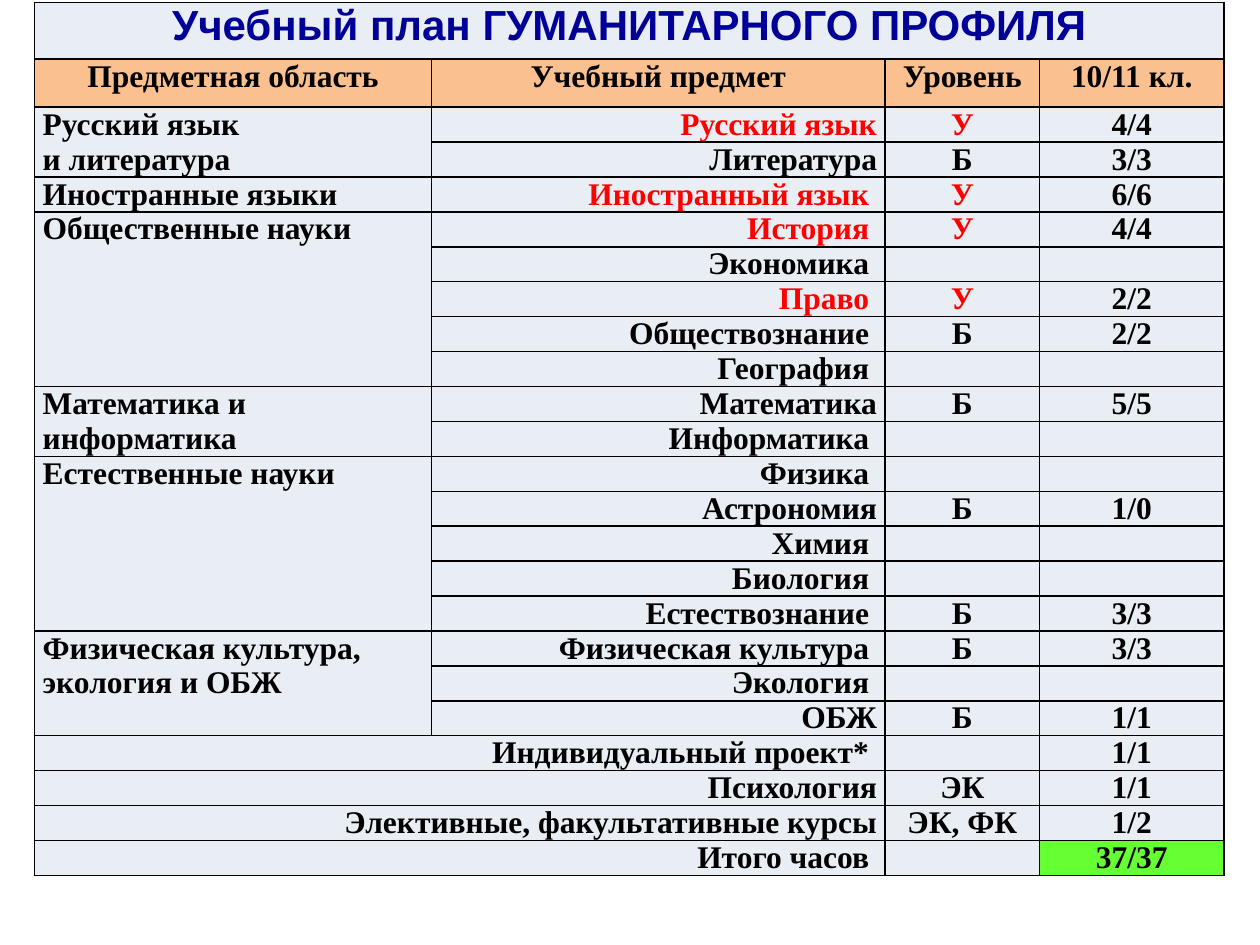
from lxml.etree import SubElement
from pptx import Presentation
from pptx.dml.color import RGBColor
from pptx.enum.text import PP_ALIGN
from pptx.oxml.ns import qn
from pptx.util import Cm, Pt

BLACK = RGBColor(0, 0, 0)
RED = RGBColor(0xFF, 0, 0)
NAVY = RGBColor(0, 0, 0x99)
PALE = RGBColor(0xE9, 0xED, 0xF4)
PEACH = RGBColor(0xFA, 0xC0, 0x90)
GREEN = RGBColor(0x66, 0xFF, 0x33)

LEFT, CENTER, RIGHT = PP_ALIGN.LEFT, PP_ALIGN.CENTER, PP_ALIGN.RIGHT

TITLE = "Учебный план ГУМАНИТАРНОГО ПРОФИЛЯ"
HEADS = ["Предметная область", "Учебный предмет", "Уровень", "10/11 кл."]
AREAS = [
    ("Русский язык\nи литература", [
        ("Русский язык", "У", "4/4"),
        ("Литература", "Б", "3/3")]),
    ("Иностранные языки", [
        ("Иностранный язык ", "У", "6/6")]),
    ("Общественные науки", [
        ("История ", "У", "4/4"),
        ("Экономика ", "", ""),
        ("Право ", "У", "2/2"),
        ("Обществознание ", "Б", "2/2"),
        ("География ", "", "")]),
    ("Математика и информатика", [
        ("Математика", "Б", "5/5"),
        ("Информатика ", "", "")]),
    ("Естественные науки", [
        ("Физика ", "", ""),
        ("Астрономия", "Б", "1/0"),
        ("Химия ", "", ""),
        ("Биология ", "", ""),
        ("Естествознание ", "Б", "3/3")]),
    ("Физическая культура, экология и ОБЖ", [
        ("Физическая культура ", "Б", "3/3"),
        ("Экология ", "", ""),
        ("ОБЖ", "Б", "1/1")]),
]
TOTALS = [
    ("Индивидуальный проект* ", "", "1/1"),
    ("Психология", "ЭК", "1/1"),
    ("Элективные, факультативные курсы", "ЭК, ФК", "1/2"),
    ("Итого часов ", "", "37/37"),
]
WIDTHS = [Cm(8), Cm(9.14), Cm(3.12), Cm(3.71)]
TALL, HEAD, ROW = Cm(1.14), Cm(0.97), Cm(0.7)


def style(cell):
    cell.margin_left = cell.margin_right = Cm(0.16)
    cell.margin_top = cell.margin_bottom = 0
    props = cell._tc.get_or_add_tcPr()
    for side in ("a:lnL", "a:lnR", "a:lnT", "a:lnB"):
        line = SubElement(props, qn(side), w=str(Pt(1)))
        fill = SubElement(line, qn("a:solidFill"))
        SubElement(fill, qn("a:srgbClr"), val=str(BLACK))
    cell.fill.solid()
    cell.fill.fore_color.rgb = PALE
    SubElement(cell.text_frame.paragraphs[0]._p, qn("a:endParaRPr"), sz="1200")


def write(cell, text, align, color=BLACK, face="Times New Roman", size=18):
    if not text:
        return
    cell.text_frame.text = text
    for par in cell.text_frame.paragraphs:
        par.alignment = align
        for run in par.runs:
            run.font.name = face
            run.font.size = Pt(size)
            run.font.bold = True
            run.font.color.rgb = color


def add_heads(table):
    table.cell(0, 0).merge(table.cell(0, 3))
    write(table.cell(0, 0), TITLE, CENTER, NAVY, "Arial", 24)
    for col, text in enumerate(HEADS):
        cell = table.cell(1, col)
        write(cell, text, CENTER)
        cell.fill.fore_color.rgb = PEACH


def add_row(table, row, col, entry):
    name, level, hours = entry
    color = RED if level == "У" else BLACK
    write(table.cell(row, col), name, RIGHT, color)
    write(table.cell(row, 2), level, CENTER, color)
    write(table.cell(row, 3), hours, CENTER)


def add_plan(slide, left, top):
    count = 2 + sum(len(items) for _, items in AREAS) + len(TOTALS)
    heights = [TALL, HEAD] + [ROW] * (count - 2)
    frame = slide.shapes.add_table(
        count, len(WIDTHS), left, top, sum(WIDTHS), sum(heights))
    table = frame.table
    for column, width in zip(table.columns, WIDTHS):
        column.width = width
    for line, height in zip(table.rows, heights):
        line.height = height
    for cell in table.iter_cells():
        style(cell)
    add_heads(table)
    row = 2
    for area, items in AREAS:
        first = table.cell(row, 0)
        if len(items) > 1:
            first.merge(table.cell(row + len(items) - 1, 0))
        write(first, area, LEFT)
        for entry in items:
            add_row(table, row, 1, entry)
            row += 1
    for entry in TOTALS:
        table.cell(row, 0).merge(table.cell(row, 1))
        add_row(table, row, 0, entry)
        row += 1
    table.cell(count - 1, 3).fill.fore_color.rgb = GREEN


def main():
    deck = Presentation()
    deck.slide_width, deck.slide_height = Cm(25.4), Cm(19.05)
    slide = deck.slides.add_slide(deck.slide_layouts[6])
    add_plan(slide, Cm(0.7), Cm(0.05))
    deck.save("out.pptx")


if __name__ == "__main__":
    main()
